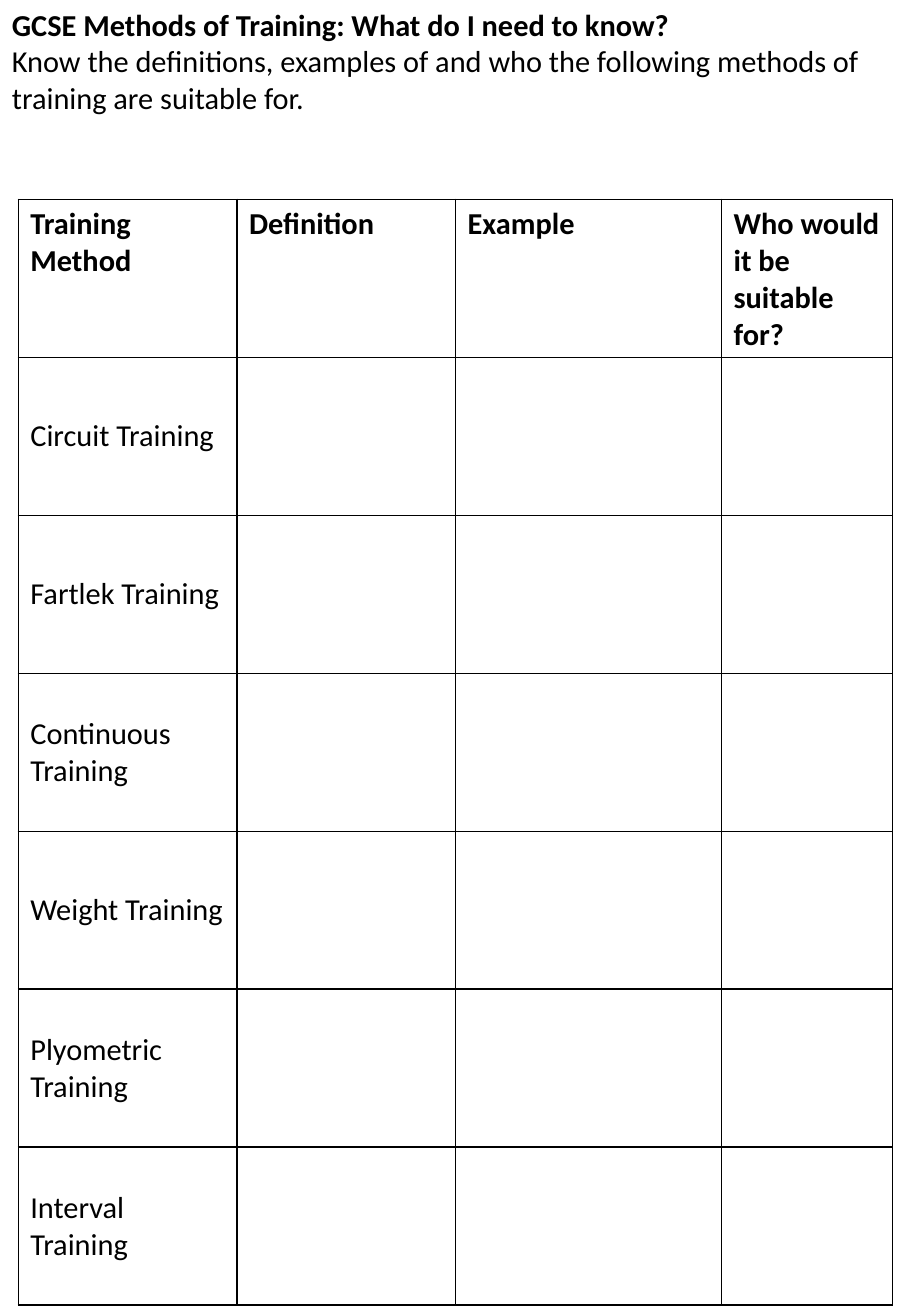
from dataclasses import dataclass

from lxml.etree import SubElement
from pptx import Presentation
from pptx.dml.color import RGBColor as Rgb
from pptx.enum.text import MSO_ANCHOR as Anchor, MSO_AUTO_SIZE as Fit
from pptx.oxml.ns import qn
from pptx.util import Pt

PX = 9144  # EMU per px, 100 px to the inch


@dataclass(frozen=True)
class Theme:
    font: str = "Calibri"
    size: int = 18
    ink: str = "000000"
    rule: int = 1


THEME = Theme()
TITLE = "GCSE Methods of Training: What do I need to know?"
BRIEF = ("Know the definitions, examples of and who the following "
         "methods of training are suitable for.")
HEADS = ["Training Method", "Definition", "Example",
         "Who would it be suitable for?"]
KINDS = ["Circuit", "Fartlek", "Continuous", "Weight", "Plyometric", "Interval"]
COLS = [180, 180, 219, 141]
HEAD_H, ROW_H = 64, 130


def add_run(para, text, bold=False):
    run = para.add_run()
    run.text = text
    font = run.font
    font.name, font.size, font.bold = THEME.font, Pt(THEME.size), bold
    font.color.rgb = Rgb.from_string(THEME.ink)


def rule_cell(cell):
    """Draw the four borders, then clear the fill."""
    props = cell._tc.get_or_add_tcPr()
    for side in ("L", "R", "T", "B"):
        line = SubElement(props, qn(f"a:ln{side}"), w=str(Pt(THEME.rule)))
        fill = SubElement(line, qn("a:solidFill"))
        SubElement(fill, qn("a:srgbClr"), val=THEME.ink)
    cell.fill.background()


def add_intro(slide, x, y, w, h):
    box = slide.shapes.add_textbox(x * PX, y * PX, w * PX, h * PX)
    frame = box.text_frame
    frame.word_wrap = True
    frame.auto_size = Fit.SHAPE_TO_FIT_TEXT
    add_run(frame.paragraphs[0], TITLE, bold=True)
    add_run(frame.add_paragraph(), BRIEF)


def add_grid(slide, x, y, w, h):
    rows = len(KINDS) + 1
    grid = slide.shapes.add_table(
        rows, len(COLS), x * PX, y * PX, w * PX, h * PX).table
    grid.first_row = grid.horz_banding = False
    for col, wide in zip(grid.columns, COLS):
        col.width = wide * PX
    for i, row in enumerate(grid.rows):
        row.height = (ROW_H if i else HEAD_H) * PX
    for cell in grid.iter_cells():
        rule_cell(cell)
    for i, head in enumerate(HEADS):
        add_run(grid.cell(0, i).text_frame.paragraphs[0], head, bold=True)
    for i, kind in enumerate(KINDS, 1):
        cell = grid.cell(i, 0)
        cell.vertical_anchor = Anchor.MIDDLE
        add_run(cell.text_frame.paragraphs[0], f"{kind} Training")


def main():
    deck = Presentation()
    deck.slide_width, deck.slide_height = 750 * PX, 1083 * PX
    slide = deck.slides.add_slide(deck.slide_layouts[6])
    add_intro(slide, 0, 0, 750, 101)
    add_grid(slide, 15, 164, sum(COLS), HEAD_H + ROW_H * len(KINDS))
    deck.save("out.pptx")


if __name__ == "__main__":
    main()
